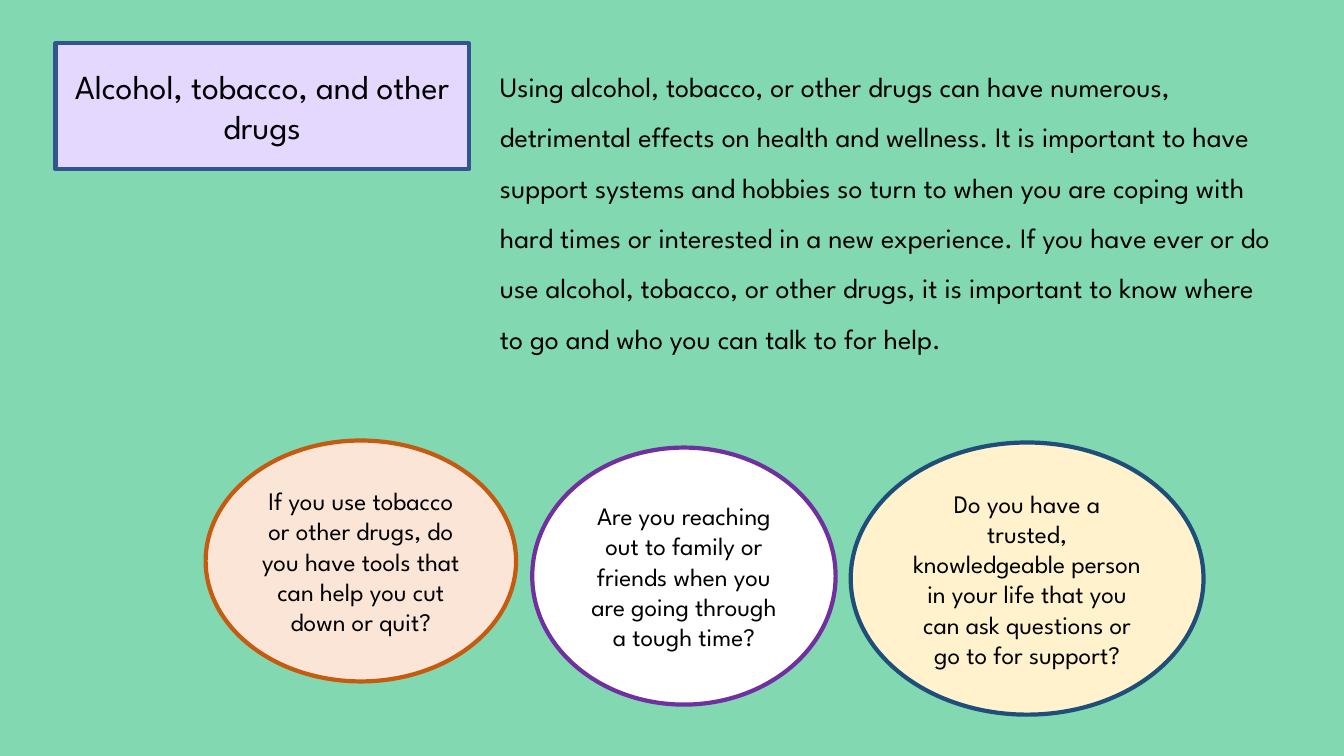
import dataclasses

import lxml.etree
import pptx
import pptx.dml.color
import pptx.enum.shapes
import pptx.enum.text
import pptx.oxml.ns
import pptx.util


@dataclasses.dataclass(frozen=True)
class Theme:
    """Colours, font and type sizes of the slide."""
    background: str = "82D8B0"
    text: str = "000000"
    title: tuple = ("E4D8FF", "325491")
    orange: tuple = ("FBE5D6", "C55A11")
    purple: tuple = ("FFFFFF", "7030A0")
    blue: tuple = ("FFF2CC", "1F4E79")
    font: str = "League Spartan"
    title_size: int = 24
    body_size: int = 20
    question_size: int = 18
    border: int = 3


class Deck:
    """A slide on a grid of 80 columns by 45 rows, with its style."""

    def __init__(self, prs, theme):
        """Add a title-and-content slide with a plain background."""
        self.theme = theme
        self.col, self.row = prs.slide_width / 80, prs.slide_height / 45
        self.slide = prs.slides.add_slide(prs.slide_layouts[1])
        self.paint(self.slide.background.fill, theme.background)

    def paint(self, fill, color):
        """Apply a solid colour to a fill."""
        fill.solid()
        fill.fore_color.rgb = pptx.dml.color.RGBColor.from_string(color)

    def box(self, left, top, width, height):
        """Turn columns and rows into slide lengths."""
        return (round(left * self.col), round(top * self.row),
                round(width * self.col), round(height * self.row))

    def place(self, sp, cells):
        """Move a placeholder to its cells."""
        sp.left, sp.top, sp.width, sp.height = self.box(*cells)

    def outline(self, sp, colors):
        """Give a shape its fill and border."""
        fill, line = colors
        self.paint(sp.fill, fill)
        self.paint(sp.line.fill, line)
        sp.line.width = pptx.util.Pt(self.theme.border)

    def set_text(self, sp, text, size, align, anchor, spacing=1.0):
        """Set and format the text of a shape."""
        tf = sp.text_frame
        tf.text = text
        tf.word_wrap = True
        tf.auto_size = pptx.enum.text.MSO_AUTO_SIZE.NONE
        tf.vertical_anchor = anchor
        p = tf.paragraphs[0]
        p.alignment = align
        p.line_spacing = spacing
        p.space_before = pptx.util.Pt(0)
        font = p.runs[0].font
        font.name = self.theme.font
        font.size = pptx.util.Pt(size)
        font.color.rgb = pptx.dml.color.RGBColor.from_string(self.theme.text)
        return p

    def title(self, text, cells):
        """Set the title in a rounded box."""
        sp = self.slide.shapes.title
        self.place(sp, cells)
        geom = lxml.etree.SubElement(sp.element.spPr, pptx.oxml.ns.qn("a:prstGeom"), prst="roundRect")
        lxml.etree.SubElement(geom, pptx.oxml.ns.qn("a:avLst"))
        self.outline(sp, self.theme.title)
        self.set_text(sp, text, self.theme.title_size, pptx.enum.text.PP_ALIGN.CENTER,
                      pptx.enum.text.MSO_ANCHOR.MIDDLE)

    def body(self, text, cells):
        """Set the body paragraph without a bullet."""
        sp = self.slide.placeholders[1]
        self.place(sp, cells)
        p = self.set_text(sp, text, self.theme.body_size, pptx.enum.text.PP_ALIGN.LEFT,
                          pptx.enum.text.MSO_ANCHOR.TOP, 1.5)
        props = p._p.get_or_add_pPr()
        props.set("marL", "0")
        props.set("indent", "0")
        lxml.etree.SubElement(props, pptx.oxml.ns.qn("a:buNone"))

    def question(self, text, cells, colors):
        """Add an ellipse that holds a question."""
        sp = self.slide.shapes.add_shape(pptx.enum.shapes.MSO_SHAPE.OVAL, *self.box(*cells))
        sp.shadow.inherit = False
        self.outline(sp, colors)
        self.set_text(sp, text, self.theme.question_size, pptx.enum.text.PP_ALIGN.CENTER,
                      pptx.enum.text.MSO_ANCHOR.MIDDLE)


def main():
    """Build and save the slide."""
    prs = pptx.Presentation()
    prs.slide_width, prs.slide_height = pptx.util.Inches(13.33), pptx.util.Inches(7.5)
    theme = Theme()
    deck = Deck(prs, theme)
    deck.title("Alcohol, tobacco, and other drugs", (3.3, 2.58, 24.6, 7.5))
    deck.body(
        "Using alcohol, tobacco, or other drugs can have numerous, detrimental effects on "
        "health and wellness. It is important to have support systems and hobbies so turn to "
        "when you are coping with hard times or interested in a new experience. If you have "
        "ever or do use alcohol, tobacco, or other drugs, it is important to know where to go "
        "and who you can talk to for help.",
        (29.16, 2.82, 47.52, 21.42))
    questions = [
        ("Are you reaching out to family or friends when you are going through a tough time?",
         (31.68, 26.64, 18.06, 15.3), theme.purple),
        ("Do you have a trusted, knowledgeable person in your life that you can ask questions "
         "or go to for support?", (50.64, 26.34, 21, 16.2), theme.blue),
        ("If you use tobacco or other drugs, do you have tools that can help you cut down or quit?",
         (12.24, 26.22, 18.48, 14.34), theme.orange),
    ]
    for text, cells, colors in questions:
        deck.question(text, cells, colors)
    prs.save("out.pptx")


if __name__ == "__main__":
    main()
